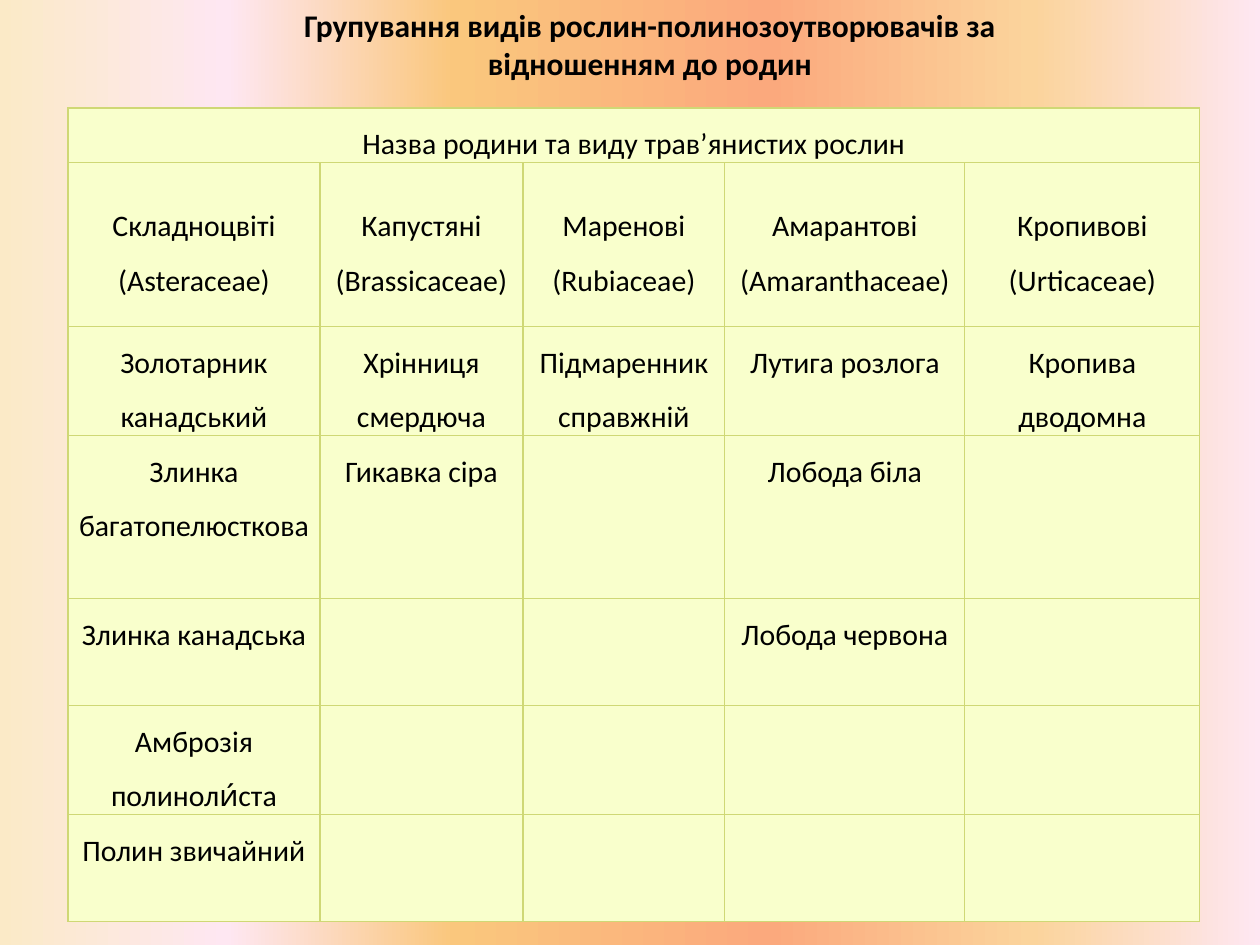
import pptx
import pptx.util
import pptx.dml.color
import pptx.enum.text
import pptx.oxml
import pptx.oxml.ns
import lxml.etree

PX = 914400 // 126
RGBColor = pptx.dml.color.RGBColor
BLACK = RGBColor(0x00, 0x00, 0x00)
CELL_FILL = RGBColor(0xF9, 0xFF, 0xCC)
BORDER = RGBColor(0xCF, 0xD8, 0x75)
GRADIENT = [
    (0, RGBColor(0xFB, 0xEA, 0xC7)),
    (18, RGBColor(0xFE, 0xE7, 0xF2)),
    (36, RGBColor(0xFA, 0xC7, 0x7D)),
    (61, RGBColor(0xFB, 0xA9, 0x7D)),
    (82, RGBColor(0xFB, 0xD4, 0x9C)),
    (100, RGBColor(0xFE, 0xE7, 0xF2)),
]
COLS = [252, 203, 202, 240, 235]
ROWS = [54, 164, 109, 163, 107, 109, 107]
CELLS = [
    ["Назва родини та виду трав’янистих рослин", "", "", "", ""],
    ["Складноцвіті (Asteraceae)", "Капустяні (Brassicaceae)", "Маренові (Rubiaceae)",
     "Амарантові\n(Amaranthaceae)", "Кропивові (Urticaceae)"],
    ["Золотарник канадський", "Хрінниця смердюча", "Підмаренник справжній",
     "Лутига розлога", "Кропива дводомна"],
    ["Злинка багатопелюсткова", "Гикавка сіра", "", "Лобода біла", ""],
    ["Злинка канадська", "", "", "Лобода червона", ""],
    ["Амброзія полиноли́ста", "", "", "", ""],
    ["Полин звичайний", "", "", "", ""],
]


def format_text(tf, size, bold, spacing):
    for p in tf.paragraphs:
        p.alignment = pptx.enum.text.PP_ALIGN.CENTER
        p.line_spacing = spacing
        for r in p.runs:
            r.font.name = "Calibri"
            r.font.size = pptx.util.Pt(size)
            r.font.bold = bold
            r.font.color.rgb = BLACK


def add_borders(cell):
    tcPr = cell._tc.get_or_add_tcPr()
    for i, side in enumerate(["lnL", "lnR", "lnT", "lnB"]):
        ln = pptx.oxml.parse_xml(
            f'<a:{side} {pptx.oxml.ns.nsdecls("a")} w="9525"><a:solidFill>'
            f'<a:srgbClr val="{BORDER}"/></a:solidFill></a:{side}>')
        tcPr.insert(i, ln)


prs = pptx.Presentation()
prs.slide_width = 1260 * PX
prs.slide_height = 945 * PX
s = prs.slides.add_slide(prs.slide_layouts[6])

fill = s.background.fill
fill.gradient()
fill.gradient_angle = 0
qn = pptx.oxml.ns.qn
stops = s.element.find(".//" + qn("a:gsLst"))
for stop in list(stops):
    stops.remove(stop)
for pos, color in GRADIENT:
    gs = lxml.etree.SubElement(stops, qn("a:gs"), pos=str(pos * 1000))
    lxml.etree.SubElement(gs, qn("a:srgbClr"), val=str(color))

frame = s.shapes.add_table(len(ROWS), len(COLS), 68 * PX, 108 * PX,
                           sum(COLS) * PX, sum(ROWS) * PX)
table = frame.table
table.first_row = False
table.horz_banding = False
for column, width in zip(table.columns, COLS):
    column.width = width * PX
for row, height in zip(table.rows, ROWS):
    row.height = height * PX
table.cell(0, 0).merge(table.cell(0, len(COLS) - 1))

for i, texts in enumerate(CELLS):
    for j, text in enumerate(texts):
        cell = table.cell(i, j)
        cell.fill.solid()
        cell.fill.fore_color.rgb = CELL_FILL
        add_borders(cell)
        cell.margin_left = cell.margin_right = 9 * PX
        cell.margin_top = cell.margin_bottom = 0
        if i < 2:
            cell.vertical_anchor = pptx.enum.text.MSO_ANCHOR.MIDDLE
        if text:
            cell.text_frame.text = text
            format_text(cell.text_frame, 17, False, 1.5)

title = s.shapes.add_textbox(197 * PX, 0, 906 * PX, 89 * PX)
tf = title.text_frame
tf.word_wrap = True
tf.text = "Групування видів рослин-полинозоутворювачів за відношенням до родин"
format_text(tf, 18, True, 1.0)

prs.save("out.pptx")
